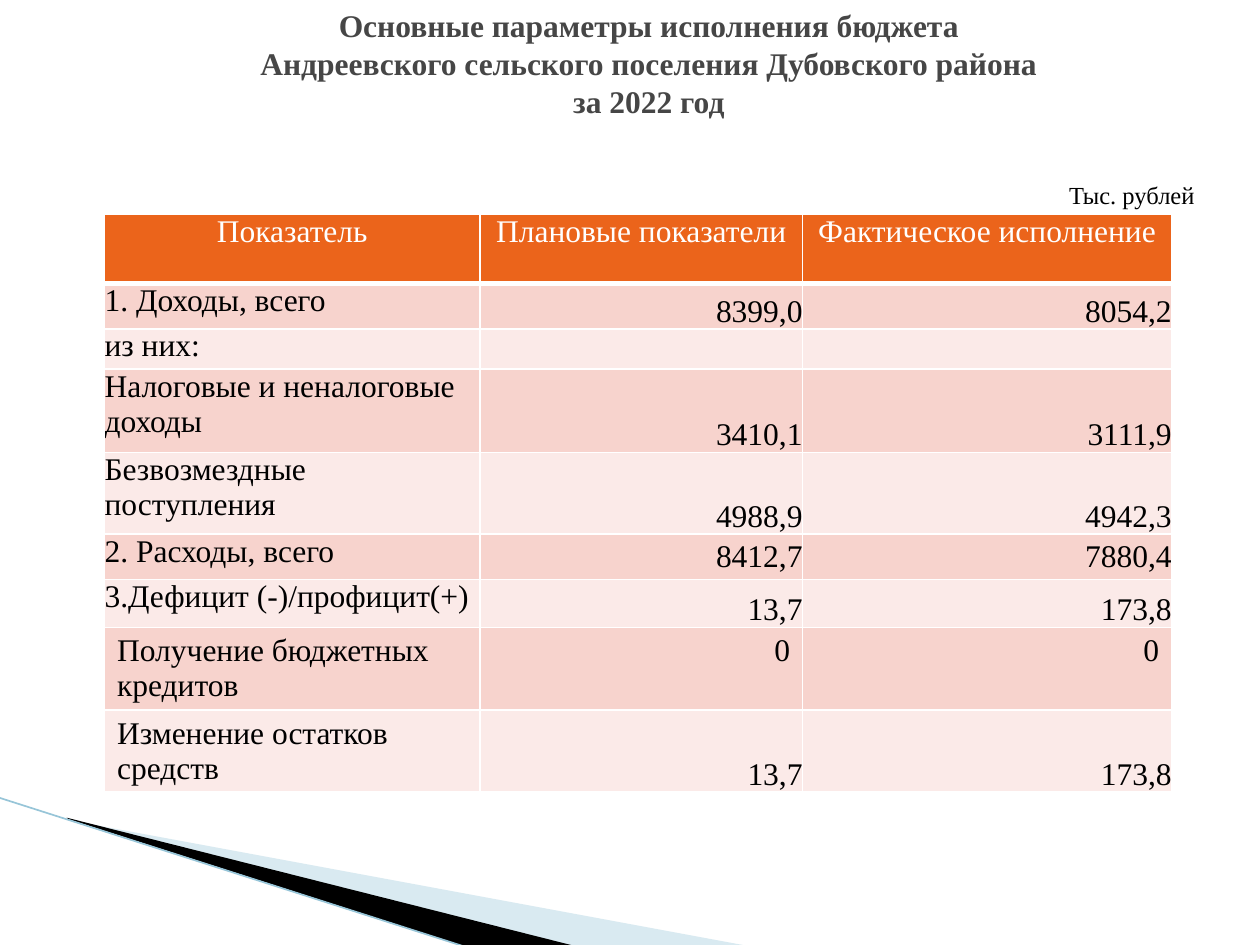
from lxml.etree import SubElement
from pptx import Presentation
from pptx.dml.color import RGBColor
from pptx.enum.shapes import MSO_CONNECTOR
from pptx.enum.text import MSO_ANCHOR, PP_ALIGN
from pptx.oxml.ns import qn
from pptx.util import Inches, Pt

WHITE = RGBColor(0xFF, 0xFF, 0xFF)
BLACK = RGBColor(0, 0, 0)
TITLE_GRAY = RGBColor(0x46, 0x46, 0x46)
HEADER_ORANGE = RGBColor(0xEB, 0x64, 0x1B)
ROW_DARK = RGBColor(0xF7, 0xD3, 0xCD)
ROW_LIGHT = RGBColor(0xFB, 0xEA, 0xE8)
WEDGE_BLUE = RGBColor(0xA0, 0xCB, 0xDC)
LINE_BLUE = RGBColor(0x97, 0xC5, 0xD8)
FONT = "Times New Roman"

TITLE = ("Основные параметры исполнения бюджета\v"
         "Андреевского сельского поселения Дубовского района\v"
         "за 2022 год")
HEADERS = ["Показатель", "Плановые показатели", "Фактическое исполнение"]
BUDGET_ROWS = [
    ("1. Доходы, всего", "8399,0", "8054,2"),
    ("из них:", "", ""),
    ("Налоговые и неналоговые доходы", "3410,1", "3111,9"),
    ("Безвозмездные поступления", "4988,9", "4942,3"),
    ("2. Расходы, всего", "8412,7", "7880,4"),
    ("3.Дефицит (-)/профицит(+)", "13,7", "173,8"),
    ("Получение бюджетных кредитов", "0", "0"),
    ("Изменение остатков средств", "13,7", "173,8"),
]
COLUMN_WIDTHS = [2.98, 2.56, 2.93]
ROW_HEIGHTS = [0.55, 0.36, 0.32, 0.66, 0.65, 0.36, 0.38, 0.65, 0.65]
EXPENSES_ROW, CREDITS_ROW, BALANCE_ROW = 5, 7, 8


def format_font(font, **values):
    color = values.pop("color")
    for name, value in {"name": FONT, **values}.items():
        setattr(font, name, value)
    font.color.rgb = color


def write_text(text_frame, text, alignment, **font_values):
    text_frame.text = text
    paragraph = text_frame.paragraphs[0]
    paragraph.alignment = alignment
    for run in paragraph.runs:
        format_font(run.font, **font_values)
    return paragraph


def place(shape, left, top, width, height):
    box = {"left": left, "top": top, "width": width, "height": height}
    for name, value in box.items():
        setattr(shape, name, Inches(value))


def add_wedge(slide, points, color, opacity=100):
    start, *others = [(Inches(x), Inches(y)) for x, y in points]
    builder = slide.shapes.build_freeform(*start)
    builder.add_line_segments(others, close=True)
    shape = builder.convert_to_shape()
    shape.shadow.inherit = False
    shape.line.fill.background()
    shape.fill.solid()
    shape.fill.fore_color.rgb = color
    if opacity < 100:
        color_element = shape.fill._xPr.find(qn("a:solidFill"))[0]
        SubElement(color_element, qn("a:alpha"), val=str(opacity * 1000))


def add_corner_line(slide):
    line = slide.shapes.add_connector(
        MSO_CONNECTOR.STRAIGHT, Inches(-0.01), Inches(6.33), Inches(3.71), Inches(7.52))
    line.line.color.rgb = LINE_BLUE
    line.line.width = Pt(0.95)
    SubElement(line._element.spPr, qn("a:effectLst"))


def add_cell_borders(cell, bottom_width):
    """Draw white borders; call before the fill, which must follow them in the XML."""
    properties = cell._tc.get_or_add_tcPr()
    widths = {"a:lnL": 1, "a:lnR": 1, "a:lnT": 1, "a:lnB": bottom_width}
    for tag, width in widths.items():
        border = SubElement(properties, qn(tag), w=str(Pt(width)))
        fill = SubElement(border, qn("a:solidFill"))
        SubElement(fill, qn("a:srgbClr"), val=str(WHITE))


def format_cell(cell, fill_color, bottom_width=1, inset=False):
    add_cell_borders(cell, bottom_width)
    cell.fill.solid()
    cell.fill.fore_color.rgb = fill_color
    if not inset:
        for side in ("left", "top", "right", "bottom"):
            setattr(cell, f"margin_{side}", 0)


def add_budget_table(slide):
    table = slide.shapes.add_table(
        len(ROW_HEIGHTS), len(COLUMN_WIDTHS), Inches(0.83), Inches(1.7),
        Inches(sum(COLUMN_WIDTHS)), Inches(sum(ROW_HEIGHTS))).table
    for column, width in zip(table.columns, COLUMN_WIDTHS):
        column.width = Inches(width)
    for row, height in zip(table.rows, ROW_HEIGHTS):
        row.height = Inches(height)

    for column, text in enumerate(HEADERS):
        cell = table.cell(0, column)
        format_cell(cell, HEADER_ORANGE, bottom_width=3)
        write_text(cell.text_frame, text, PP_ALIGN.CENTER, size=Pt(18), bold=False, color=WHITE)

    for row, texts in enumerate(BUDGET_ROWS, start=1):
        for column, text in enumerate(texts):
            cell = table.cell(row, column)
            is_value = column > 0
            inset = row == CREDITS_ROW or (row == BALANCE_ROW and not is_value)
            format_cell(cell, ROW_DARK if row % 2 else ROW_LIGHT, inset=inset)
            alignment = PP_ALIGN.RIGHT if is_value else PP_ALIGN.LEFT
            paragraph = write_text(
                cell.text_frame, text, alignment, size=Pt(18), bold=False, color=BLACK)
            if is_value and text and not inset:
                paragraph.line_spacing = 1.15
                if row != EXPENSES_ROW:
                    cell.vertical_anchor = MSO_ANCHOR.BOTTOM


def add_title(slide):
    title = slide.shapes.title
    place(title, 0.75, 0, 8.8, 0.99)
    title.text_frame.vertical_anchor = MSO_ANCHOR.MIDDLE
    paragraph = write_text(
        title.text_frame, TITLE, PP_ALIGN.CENTER, size=Pt(18), bold=True, color=TITLE_GRAY)
    paragraph.line_spacing = Pt(21.7)


def add_unit_label(slide):
    label = slide.shapes.add_textbox(Inches(7.38), Inches(1.38), Inches(2.2), Inches(0.34))
    label.text_frame.word_wrap = True
    write_text(label.text_frame, "Тыс. рублей", PP_ALIGN.RIGHT, size=Pt(14), color=BLACK)


def main():
    presentation = Presentation()
    presentation.slide_width = Inches(10)
    presentation.slide_height = Inches(7.5)
    slide = presentation.slides.add_slide(presentation.slide_layouts[5])
    add_wedge(slide, [(0.55, 6.51), (5.95, 7.51), (4.56, 7.51), (0.55, 6.5)], WEDGE_BLUE, 40)
    add_wedge(slide, [(0.53, 6.49), (4.57, 7.51), (3.72, 7.52), (0.54, 6.5)], BLACK)
    add_corner_line(slide)
    add_budget_table(slide)
    add_title(slide)
    add_unit_label(slide)
    presentation.save("out.pptx")


if __name__ == "__main__":
    main()
